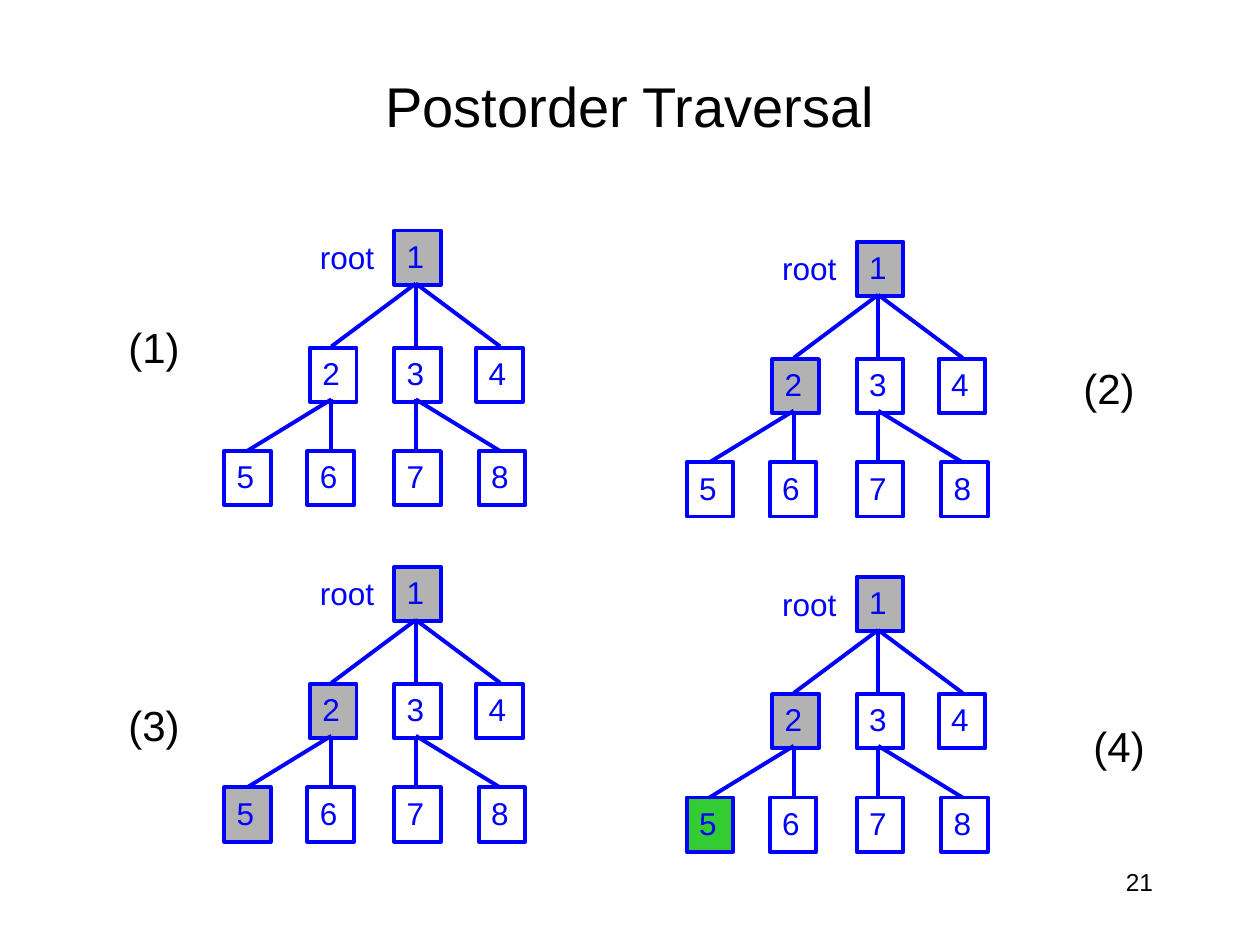
"""Build a slide that shows four steps of a postorder tree traversal."""
from dataclasses import dataclass

from lxml.etree import SubElement
from pptx import Presentation
from pptx.dml.color import RGBColor
from pptx.enum.shapes import MSO_CONNECTOR as Connector, MSO_SHAPE as Shape
from pptx.enum.text import MSO_ANCHOR as Anchor, MSO_AUTO_SIZE as AutoSize, PP_ALIGN as Align
from pptx.oxml.ns import qn
from pptx.util import Inches, Pt

BLACK, BLUE, GRAY, GREEN = "000000", "0000FF", "B2B2B2", "33CC33"

COLUMN = 0.67
NODES = {
    "1": (0, 0),
    "2": (-0.67, 0.93), "3": (0, 0.93), "4": (0.65, 0.93),
    "5": (-1.35, 1.75), "6": (-0.69, 1.75), "7": (0, 1.75), "8": (0.67, 1.75),
}
BRANCHES = [
    (0.42, 0.92, [(0, 0), (0, -1), (0, 1)]),
    (1.34, 1.75, [(-1, -2), (-1, -1), (0, 0), (0, 1)]),
]
STEPS = [
    ("(1)", (0.92, 2.5), (3.13, 1.83), {"1": GRAY}),
    ("(2)", (8.5, 2.83), (6.8, 1.92), {"1": GRAY, "2": GRAY}),
    ("(3)", (0.92, 5.5), (3.13, 4.5), {"1": GRAY, "2": GRAY, "5": GRAY}),
    ("(4)", (8.58, 5.67), (6.8, 4.58), {"1": GRAY, "2": GRAY, "5": GREEN}),
]


def color(value):
    return RGBColor.from_string(value)


def write(shape, text, size=18, fill=BLACK, font="Arial", align=Align.LEFT,
          anchor=Anchor.TOP, fixed=False):
    frame = shape.text_frame
    frame.word_wrap = fixed
    frame.auto_size = AutoSize.NONE if fixed else AutoSize.SHAPE_TO_FIT_TEXT
    frame.vertical_anchor = anchor
    paragraph = frame.paragraphs[0]
    paragraph.alignment = align
    run = paragraph.add_run()
    run.text = text
    run.font.name = font
    run.font.size = Pt(size)
    run.font.color.rgb = color(fill)


@dataclass
class TraversalSlide:
    slide: object
    ink: str = BLUE
    weight: float = 2.25

    def stroke(self, shape):
        shape.line.color.rgb = color(self.ink)
        shape.line.width = Pt(self.weight)

    def label(self, text, left, top, width, height, **style):
        box = self.slide.shapes.add_textbox(*map(Inches, (left, top, width, height)))
        write(box, text, **style)

    def node(self, text, left, top, fill=None):
        box = self.slide.shapes.add_shape(
            Shape.RECTANGLE, *map(Inches, (left, top, 0.37, 0.43)))
        box.shadow.inherit = False
        if fill:
            box.fill.solid()
            box.fill.fore_color.rgb = color(fill)
        else:
            box.fill.background()
        self.stroke(box)
        write(box, text, fill=self.ink)

    def branch(self, *ends):
        line = self.slide.shapes.add_connector(Connector.STRAIGHT, *map(Inches, ends))
        SubElement(line._element.spPr, qn("a:effectLst"))
        self.stroke(line)

    def tree(self, left, top, fills):
        for name, (across, down) in NODES.items():
            self.node(name, left + across, top + down, fills.get(name))
        center = left + 0.17
        for start, end, links in BRANCHES:
            for parent, child in links:
                self.branch(center + parent * COLUMN, top + start,
                            center + child * COLUMN, top + end)
        self.label("root", left - 0.69, top + 0.01, 0.63, 0.4, fill=self.ink)


def main():
    presentation = Presentation()
    presentation.slide_width, presentation.slide_height = Inches(10), Inches(7.5)
    page = TraversalSlide(presentation.slides.add_slide(presentation.slide_layouts[6]))
    page.label("21", 7.17, 6.83, 2.08, 0.5, size=14, align=Align.RIGHT, fixed=True)
    page.label("Postorder Traversal", 0.75, 0.42, 8.5, 0.83, size=32,
               align=Align.CENTER, anchor=Anchor.MIDDLE, fixed=True)
    for number, place, origin, fills in STEPS:
        page.tree(*origin, fills)
        page.label(number, *place, 0.61, 0.5, size=24)
    presentation.save("out.pptx")


if __name__ == "__main__":
    main()
